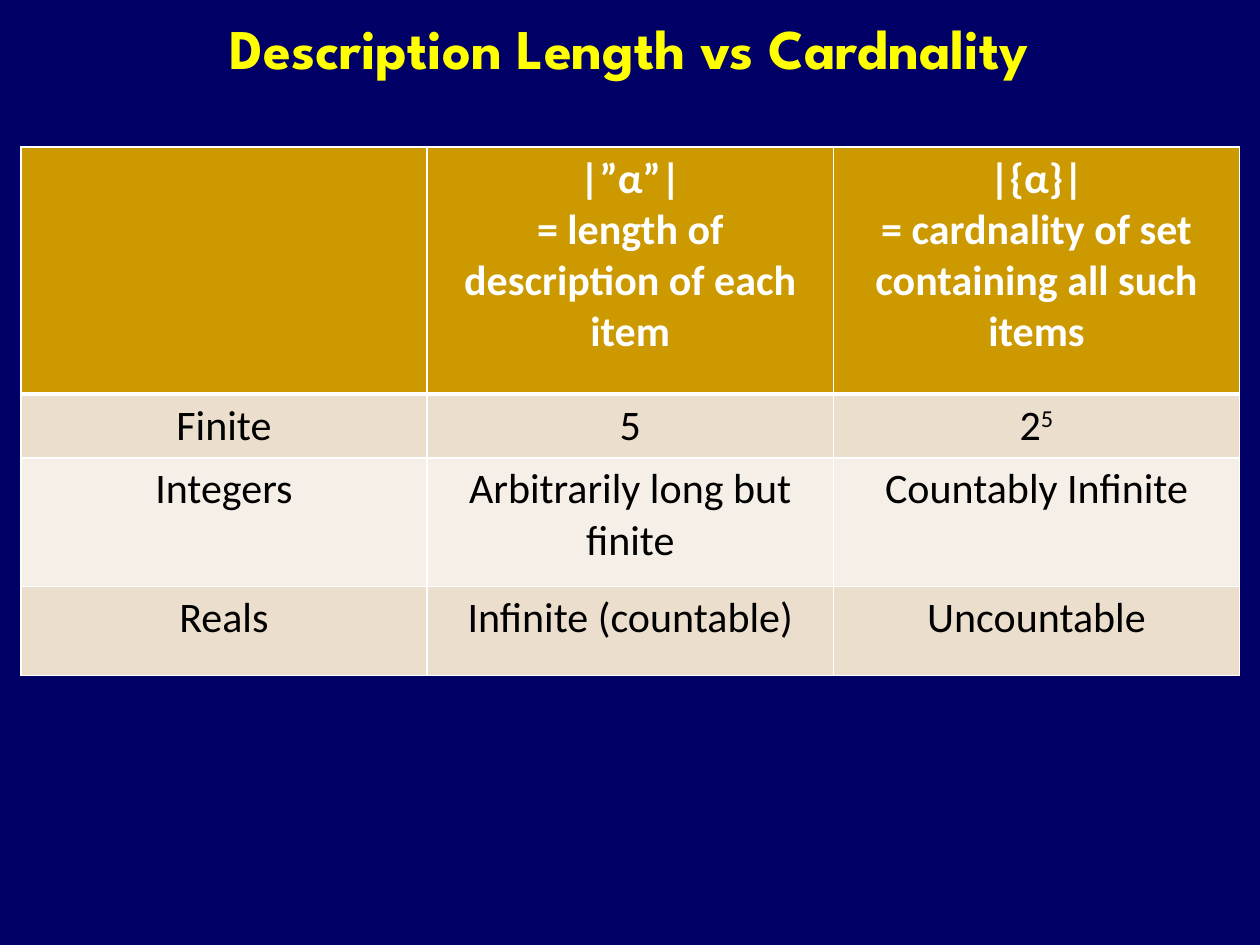
"""Build a slide with a table comparing description length and cardinality."""
from lxml import etree
from pptx import Presentation
from pptx.dml.color import RGBColor
from pptx.enum.text import MSO_ANCHOR, PP_ALIGN
from pptx.oxml.ns import qn
from pptx.util import Cm, Pt

CENTER = PP_ALIGN.CENTER
MIDDLE = MSO_ANCHOR.MIDDLE
TITLE_ONLY = 5

ROWS = [
    ["", "|”α”|\n= length of description of each item",
     "|{α}|\n= cardnality of set containing all such items"],
    ["Finite", "5", "2^5"],
    ["Integers", "Arbitrarily long but finite", "Countably Infinite"],
    ["Reals", "Infinite (countable)", "Uncountable"],
]
ROW_HEIGHTS = [4.98, 1, 2.59, 1.8]
COLUMN_WIDTH = 8.19


def color(value):
    return RGBColor.from_string(value)


class SlideBuilder:
    title_font, body_font = "League Spartan", "Calibri"
    background, title_color = "000066", "FFFF00"
    header_fill, header_text, body_text = "CC9900", "FFFFFF", "000000"
    band_fills = ["F6EFE7", "ECDECC"]
    border_color, thin, thick = "FFFFFF", 1, 3

    def __init__(self, presentation):
        self.slide = presentation.slides.add_slide(presentation.slide_layouts[TITLE_ONLY])
        fill = self.slide.background.fill
        fill.solid()
        fill.fore_color.rgb = color(self.background)

    def style_paragraph(self, paragraph, name, size, text_color, bold):
        paragraph.alignment = CENTER
        for run in paragraph.runs:
            run.font.name = name
            run.font.size = Pt(size)
            run.font.bold = bold
            run.font.color.rgb = color(text_color)

    def add_title(self, text, left, top, width, height):
        title = self.slide.shapes.title
        title.left, title.top = Cm(left), Cm(top)
        title.width, title.height = Cm(width), Cm(height)
        title.text_frame.text = text
        title.text_frame.vertical_anchor = MIDDLE
        self.style_paragraph(title.text_frame.paragraphs[0], self.title_font, 32,
                             self.title_color, True)

    def add_table(self, rows, left, top, column_width, row_heights):
        column_count = len(rows[0])
        table = self.slide.shapes.add_table(
            len(rows), column_count, Cm(left), Cm(top),
            Cm(column_width * column_count), Cm(sum(row_heights))).table
        for column in table.columns:
            column.width = Cm(column_width)
        for index, (texts, height) in enumerate(zip(rows, row_heights)):
            table.rows[index].height = Cm(height)
            for cell, text in zip(table.rows[index].cells, texts):
                self.fill_cell(cell, text, index)

    def fill_cell(self, cell, text, row_index):
        is_header = row_index == 0
        self.set_borders(cell, top=self.thick if row_index == 1 else self.thin,
                         bottom=self.thick if is_header else self.thin)
        cell.fill.solid()
        cell.fill.fore_color.rgb = color(
            self.header_fill if is_header else self.band_fills[row_index % 2])
        base, _, exponent = text.partition("^")
        paragraph = cell.text_frame.paragraphs[0]
        paragraph.text = base
        if exponent:
            run = paragraph.add_run()
            run.text = exponent
            run._r.get_or_add_rPr().set("baseline", "30000")
        self.style_paragraph(paragraph, self.body_font, 24,
                             self.header_text if is_header else self.body_text, is_header)

    def set_borders(self, cell, top, bottom):
        properties = cell._tc.get_or_add_tcPr()
        widths = {"a:lnL": self.thin, "a:lnR": self.thin, "a:lnT": top, "a:lnB": bottom}
        for tag, width in widths.items():
            line = etree.SubElement(properties, qn(tag), w=str(Pt(width)))
            fill = etree.SubElement(line, qn("a:solidFill"))
            etree.SubElement(fill, qn("a:srgbClr"), val=self.border_color)


def main():
    presentation = Presentation()
    presentation.slide_width, presentation.slide_height = Cm(25.4), Cm(19.05)
    builder = SlideBuilder(presentation)
    builder.add_title("Description Length vs Cardnality", 1.9, -0.64, 21.59, 3.18)
    builder.add_table(ROWS, 0.42, 2.96, COLUMN_WIDTH, ROW_HEIGHTS)
    presentation.save("out.pptx")


if __name__ == "__main__":
    main()
